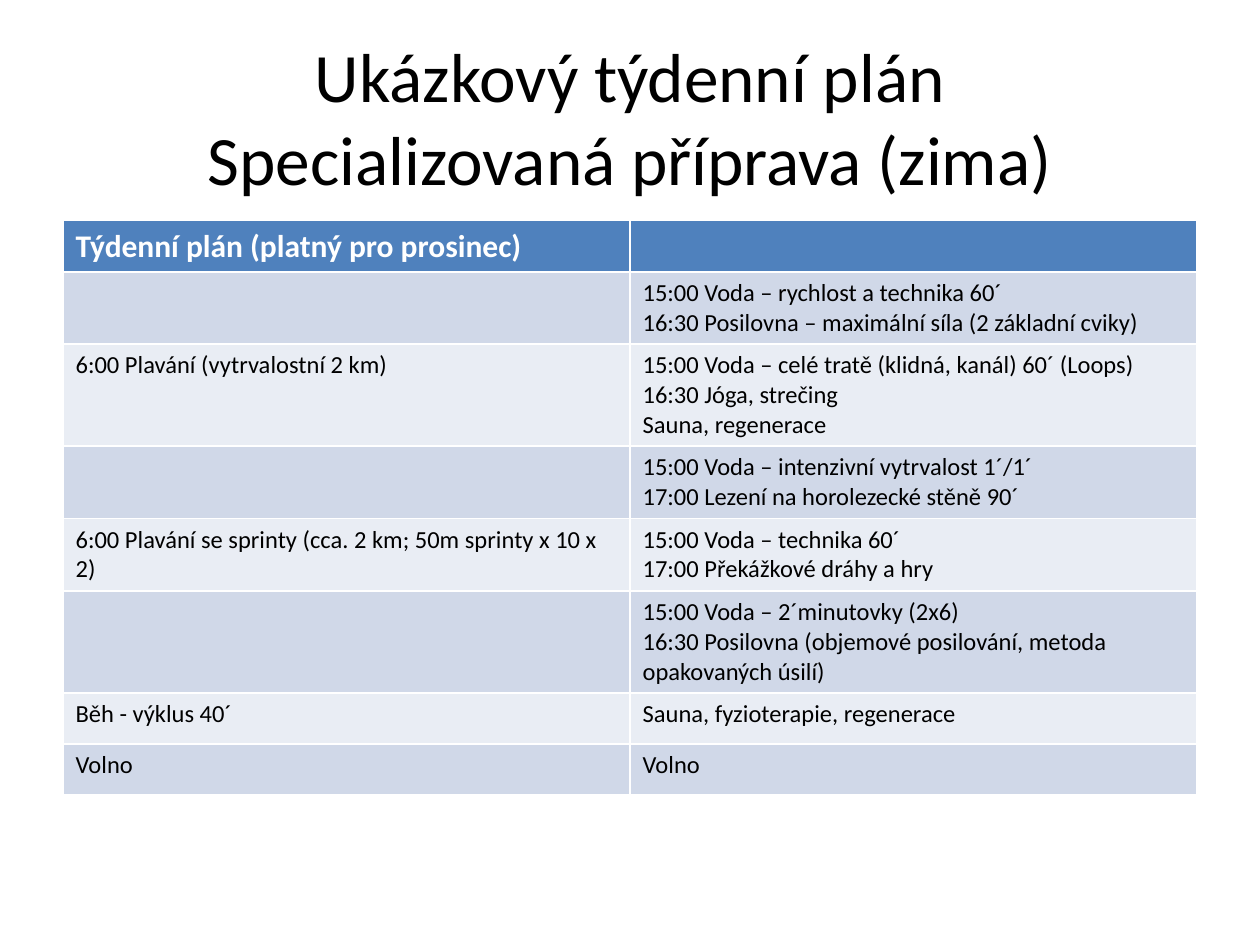
import pptx
import pptx.util
import pptx.dml.color
import pptx.enum.text

Cm = pptx.util.Cm
Pt = pptx.util.Pt
RGBColor = pptx.dml.color.RGBColor

BLACK = RGBColor(0x00, 0x00, 0x00)
WHITE = RGBColor(0xFF, 0xFF, 0xFF)
HEADER = RGBColor(0x4F, 0x81, 0xBD)
BANDS = [RGBColor(0xE9, 0xED, 0xF4), RGBColor(0xD0, 0xD8, 0xE8)]

HEADER_FONT = {"name": "Calibri", "size": Pt(18), "bold": True}
BODY_FONT = {"name": "Calibri", "size": Pt(14), "bold": False}
TITLE_FONT = {"name": "Calibri", "size": Pt(39.6)}

# Morning and afternoon of each day, one text line per paragraph
PLAN = [
    ("Týdenní plán (platný pro prosinec)", ""),
    ("", "15:00 Voda – rychlost a technika 60´\n"
         "16:30 Posilovna – maximální síla (2 základní cviky)"),
    ("6:00 Plavání (vytrvalostní 2 km)",
     "15:00 Voda – celé tratě (klidná, kanál) 60´ (Loops)\n"
     "16:30 Jóga, strečing\n"
     "Sauna, regenerace"),
    ("", "15:00 Voda – intenzivní vytrvalost 1´/1´\n"
         "17:00 Lezení na horolezecké stěně 90´"),
    ("6:00 Plavání se sprinty (cca. 2 km; 50m sprinty x 10 x 2)",
     "15:00 Voda – technika 60´\n"
     "17:00 Překážkové dráhy a hry"),
    ("", "15:00 Voda – 2´minutovky (2x6)\n"
         "16:30 Posilovna (objemové posilování, metoda opakovaných úsilí)"),
    ("Běh - výklus 40´", "Sauna, fyzioterapie, regenerace"),
    ("Volno", "Volno"),
]


def format_font(font, values, color):
    for name, value in values.items():
        setattr(font, name, value)
    font.color.rgb = color


prs = pptx.Presentation()
prs.slide_width, prs.slide_height = Cm(25.4), Cm(19.05)
s = prs.slides.add_slide(prs.slide_layouts[5])

# Title
title = s.shapes.title
title.left, title.top, title.width, title.height = Cm(1.27), Cm(0.76), Cm(22.86), Cm(3.18)
tf = title.text_frame
tf.text = "Ukázkový týdenní plán\vSpecializovaná příprava (zima)"
tf.auto_size = pptx.enum.text.MSO_AUTO_SIZE.NONE
tf.vertical_anchor = pptx.enum.text.MSO_ANCHOR.MIDDLE
p = tf.paragraphs[0]
p.alignment = pptx.enum.text.PP_ALIGN.CENTER
for r in p.runs:
    format_font(r.font, TITLE_FONT, BLACK)

# Weekly plan; the table style draws the white borders
row_height = Cm(1.03)
table = s.shapes.add_table(len(PLAN), 2, Cm(1.27), Cm(4.45),
                           Cm(22.86), row_height * len(PLAN)).table
for i, day in enumerate(PLAN):
    table.rows[i].height = row_height
    for j, text in enumerate(day):
        cell = table.cell(i, j)
        cell.fill.solid()
        cell.fill.fore_color.rgb = BANDS[i % 2] if i else HEADER
        if not text:
            continue
        cell.text_frame.text = text
        for p in cell.text_frame.paragraphs:
            for r in p.runs:
                if i:
                    format_font(r.font, BODY_FONT, BLACK)
                else:
                    format_font(r.font, HEADER_FONT, WHITE)

prs.save("out.pptx")
